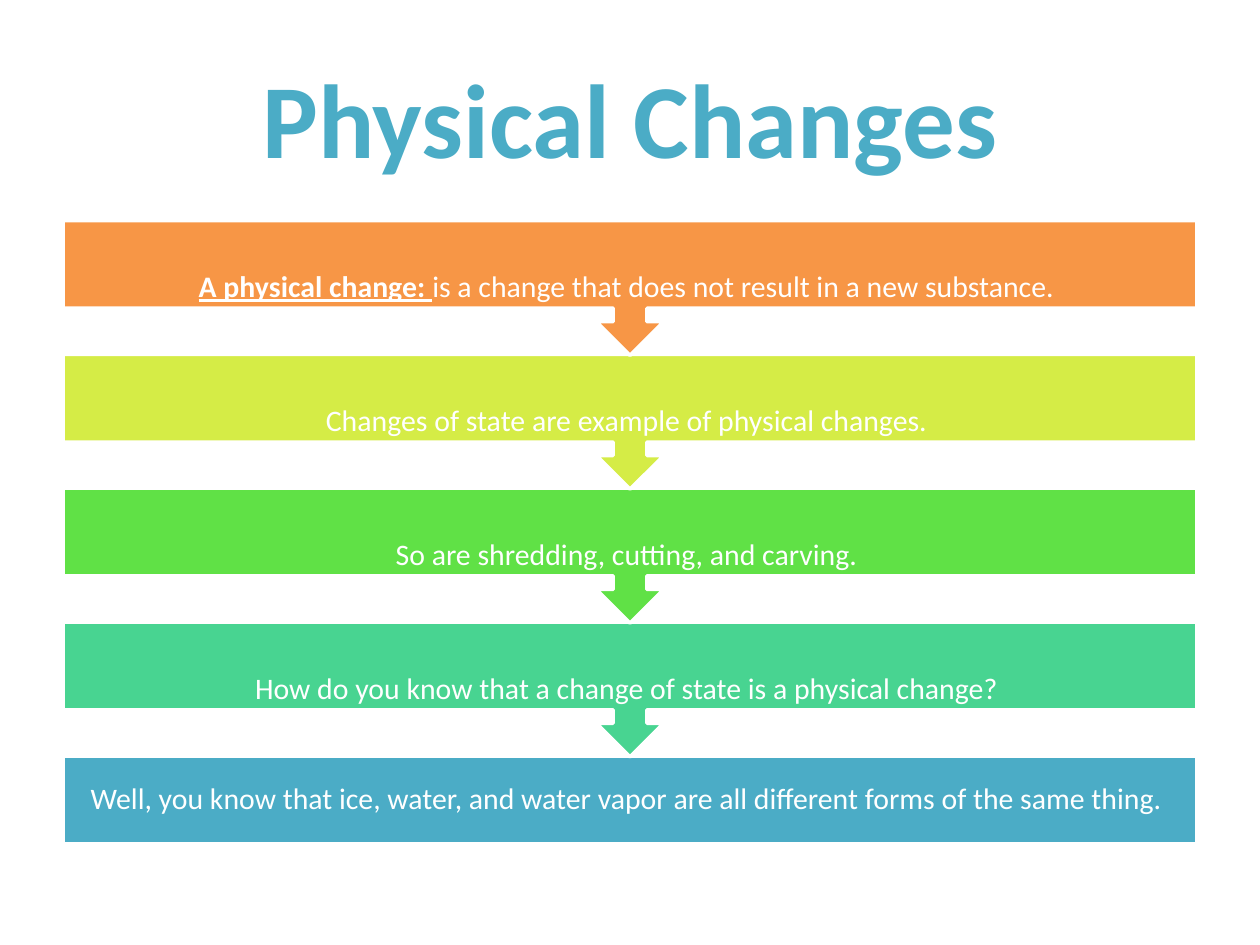
import pptx
import pptx.dml.color
import pptx.enum.shapes
import pptx.enum.text
import pptx.util

RGBColor = pptx.dml.color.RGBColor
MSO_SHAPE = pptx.enum.shapes.MSO_SHAPE
Inches = pptx.util.Inches
Pt = pptx.util.Pt

WHITE = RGBColor(0xFF, 0xFF, 0xFF)
TEAL = RGBColor(0x4B, 0xAC, 0xC6)
MINT = RGBColor(0x48, 0xD4, 0x91)
GREEN = RGBColor(0x60, 0xE1, 0x46)
LIME = RGBColor(0xD5, 0xEC, 0x46)
ORANGE = RGBColor(0xF7, 0x96, 0x46)

FONT = "Calibri"
LEFT, WIDTH = 0.5, 9
FIRST_TOP, ROW_PITCH = 1.75, 1.0625
CALLOUT_HEIGHT, LAST_HEIGHT = 1.07, 0.7
TEXT_INSET = 0.13

# Each step: fill, underlined lead-in, sentence
STEPS = [
    (ORANGE, "A physical change: ", "is a change that does not result in a new substance. "),
    (LIME, "", "Changes of state are example of physical changes. "),
    (GREEN, "", "So are shredding, cutting, and carving. "),
    (MINT, "", "How do you know that a change of state is a physical change? "),
    (TEAL, "", "Well, you know that ice, water, and water vapor are all "
               "different forms of the same thing. "),
]


def style_paragraph(paragraph, size, color):
    paragraph.alignment = pptx.enum.text.PP_ALIGN.CENTER
    paragraph.font.name = FONT
    paragraph.font.size = Pt(size)
    paragraph.font.color.rgb = color


def set_title(slide, text):
    title = slide.shapes.title
    title.left, title.top = Inches(LEFT), Inches(0.3)
    title.width, title.height = Inches(WIDTH), Inches(1.25)
    title.text_frame.vertical_anchor = pptx.enum.text.MSO_ANCHOR.MIDDLE
    title.text_frame.text = text
    paragraph = title.text_frame.paragraphs[0]
    style_paragraph(paragraph, 60, TEAL)
    paragraph.font.bold = True


def add_band(slide, box, fill, is_last):
    """Draw a bar; every bar but the last points down to the next one."""
    kind = MSO_SHAPE.RECTANGLE if is_last else MSO_SHAPE.UP_ARROW_CALLOUT
    shape = slide.shapes.add_shape(kind, *box)
    shape.rotation = 0 if is_last else 180
    shape.shadow.inherit = False
    shape.fill.solid()
    shape.fill.fore_color.rgb = fill
    shape.line.color.rgb = WHITE
    shape.line.width = Pt(2)


def add_band_text(slide, box, lead, sentence):
    frame = slide.shapes.add_textbox(*box).text_frame
    frame.word_wrap = True
    frame.vertical_anchor = pptx.enum.text.MSO_ANCHOR.MIDDLE
    frame.margin_left = frame.margin_right = Inches(TEXT_INSET)
    frame.margin_top = frame.margin_bottom = Inches(TEXT_INSET)
    paragraph = frame.paragraphs[0]
    style_paragraph(paragraph, 17, WHITE)
    paragraph.line_spacing = 0.9
    if lead:
        run = paragraph.add_run()
        run.text = lead
        run.font.bold = run.font.underline = True
    paragraph.add_run().text = sentence


def add_steps(slide):
    """Stack the bars from the bottom up, so each arrow lies over the next bar."""
    last = len(STEPS) - 1
    for row, (fill, lead, sentence) in reversed(list(enumerate(STEPS))):
        height = LAST_HEIGHT if row == last else CALLOUT_HEIGHT
        top = FIRST_TOP + row * ROW_PITCH
        box = [Inches(length) for length in (LEFT, top, WIDTH, height)]
        add_band(slide, box, fill, row == last)
        add_band_text(slide, box, lead, sentence)


def main():
    presentation = pptx.Presentation()
    presentation.slide_width = Inches(10)
    presentation.slide_height = Inches(7.5)
    slide = presentation.slides.add_slide(presentation.slide_layouts[5])
    set_title(slide, "Physical Changes")
    add_steps(slide)
    presentation.save("out.pptx")


if __name__ == "__main__":
    main()
